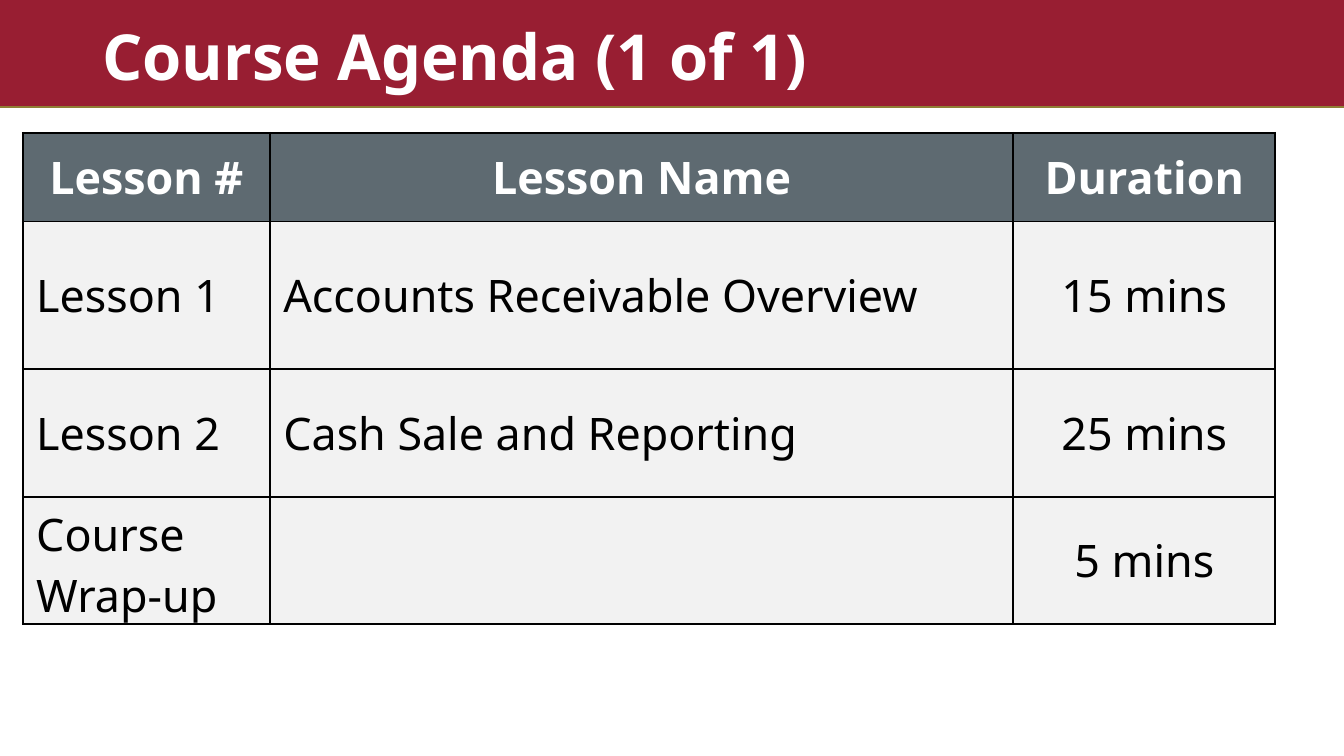
from dataclasses import dataclass

from lxml.etree import SubElement
from pptx import Presentation
from pptx.dml.color import RGBColor
from pptx.enum.shapes import MSO_CONNECTOR, MSO_SHAPE
from pptx.enum.text import MSO_ANCHOR, PP_ALIGN
from pptx.oxml.ns import qn
from pptx.util import Cm, Pt


@dataclass(frozen=True)
class Theme:
    font: str = "Noto Sans"
    banner: str = "981E32"
    rule: str = "8F7E35"
    header_fill: str = "5E6A71"
    body_fill: str = "F2F2F2"
    light_text: str = "FFFFFF"
    dark_text: str = "000000"
    border: str = "000000"
    title_size: int = 34
    table_size: int = 24
    line_width: int = 1


THEME = Theme()
SLIDE_WIDTH = Cm(25.4)
SLIDE_HEIGHT = Cm(14.29)
BANNER_HEIGHT = Cm(2.03)
COLUMN_WIDTHS = [Cm(4.67), Cm(14.05), Cm(4.95)]
ROW_HEIGHTS = [Cm(1.68), Cm(2.79), Cm(2.41), Cm(2.41)]
AGENDA = [
    ("Lesson #", "Lesson Name", "Duration"),
    ("Lesson 1", "Accounts Receivable Overview", "15 mins"),
    ("Lesson 2", "Cash Sale and Reporting", "25 mins"),
    ("Course Wrap-up", "", "5 mins"),
]


def format_text(paragraph, size, color, bold):
    for run in paragraph.runs:
        run.font.name = THEME.font
        run.font.size = Pt(size)
        run.font.bold = bold
        run.font.color.rgb = RGBColor.from_string(color)


def add_banner(slide):
    banner = slide.shapes.add_shape(
        MSO_SHAPE.RECTANGLE, 0, 0, SLIDE_WIDTH, BANNER_HEIGHT
    )
    banner.shadow.inherit = False
    banner.fill.solid()
    banner.fill.fore_color.rgb = RGBColor.from_string(THEME.banner)
    banner.line.fill.background()


def add_rule(slide):
    rule = slide.shapes.add_connector(
        MSO_CONNECTOR.STRAIGHT, 0, BANNER_HEIGHT, SLIDE_WIDTH, BANNER_HEIGHT
    )
    rule.line.color.rgb = RGBColor.from_string(THEME.rule)
    rule.line.width = Pt(THEME.line_width)
    SubElement(rule._element.spPr, qn("a:effectLst"))


def add_title(slide, text):
    title = slide.shapes.add_textbox(Cm(0.66), Cm(0.33), Cm(23.72), Cm(1.57))
    text_frame = title.text_frame
    text_frame.word_wrap = True
    text_frame.vertical_anchor = MSO_ANCHOR.BOTTOM
    text_frame.margin_left = text_frame.margin_right = Cm(1.27)
    text_frame.text = text
    paragraph = text_frame.paragraphs[0]
    paragraph.line_spacing = 0.9
    format_text(paragraph, THEME.title_size, THEME.light_text, True)


def add_borders(cell):
    properties = cell._tc.get_or_add_tcPr()
    for position, side in enumerate(("lnL", "lnR", "lnT", "lnB")):
        line = SubElement(properties, qn(f"a:{side}"), w=str(Pt(THEME.line_width)))
        fill = SubElement(line, qn("a:solidFill"))
        SubElement(fill, qn("a:srgbClr"), val=THEME.border)
        properties.insert(position, line)


def fill_cell(cell, text, is_header, is_centered):
    cell.fill.solid()
    fill_color = THEME.header_fill if is_header else THEME.body_fill
    cell.fill.fore_color.rgb = RGBColor.from_string(fill_color)
    add_borders(cell)
    cell.vertical_anchor = MSO_ANCHOR.MIDDLE
    cell.text_frame.text = text
    paragraph = cell.text_frame.paragraphs[0]
    paragraph.alignment = PP_ALIGN.CENTER if is_centered else PP_ALIGN.LEFT
    text_color = THEME.light_text if is_header else THEME.dark_text
    format_text(paragraph, THEME.table_size, text_color, is_header)


def add_agenda_table(slide, agenda):
    frame = slide.shapes.add_table(
        len(ROW_HEIGHTS), len(COLUMN_WIDTHS), Cm(0.43), Cm(2.51),
        sum(COLUMN_WIDTHS), sum(ROW_HEIGHTS),
    )
    table = frame.table
    for column, width in zip(table.columns, COLUMN_WIDTHS):
        column.width = width
    for row, height in zip(table.rows, ROW_HEIGHTS):
        row.height = height
    duration_column = len(COLUMN_WIDTHS) - 1
    for row_index, entries in enumerate(agenda):
        is_header = row_index == 0
        for column_index, text in enumerate(entries):
            is_centered = is_header or column_index == duration_column
            fill_cell(table.cell(row_index, column_index), text, is_header, is_centered)


def main():
    presentation = Presentation()
    presentation.slide_width = SLIDE_WIDTH
    presentation.slide_height = SLIDE_HEIGHT
    slide = presentation.slides.add_slide(presentation.slide_layouts[6])
    add_banner(slide)
    add_rule(slide)
    add_title(slide, "Course Agenda (1 of 1)")
    add_agenda_table(slide, AGENDA)
    presentation.save("out.pptx")


if __name__ == "__main__":
    main()
